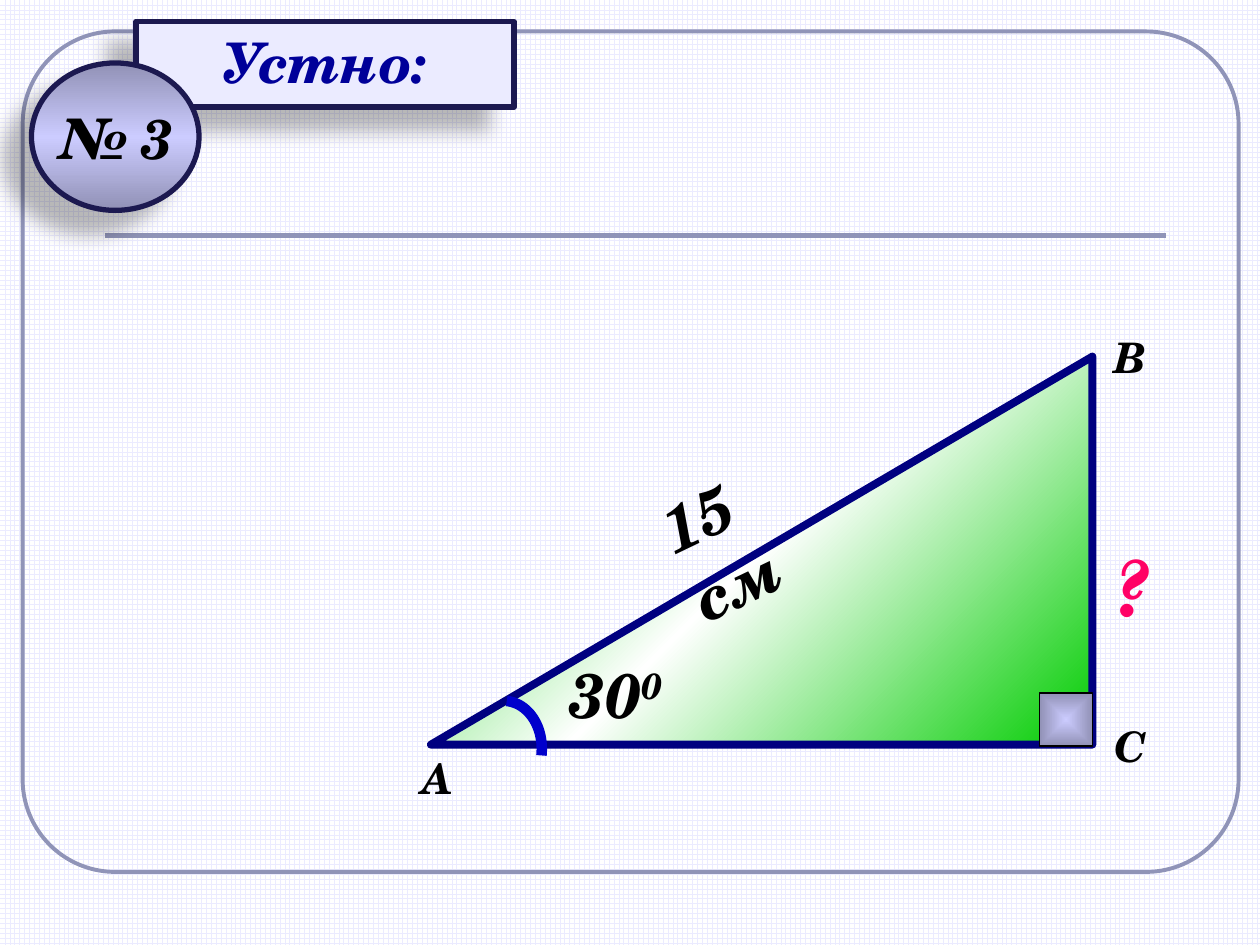
from math import cos, pi, sin
from pptx import Presentation
from pptx.dml.color import RGBColor
from pptx.enum.dml import MSO_PATTERN
from pptx.enum.shapes import MSO_CONNECTOR, MSO_SHAPE
from pptx.enum.text import MSO_ANCHOR, MSO_AUTO_SIZE, PP_ALIGN
from pptx.oxml import parse_xml
from pptx.oxml.ns import nsdecls, qn
from pptx.util import Inches, Pt

COLORS = {
    "paper": "FFFFFF", "grid": "EBEBFF", "frame": "9094B8", "edge": "1C1950",
    "title": "000099", "ink": "000000", "lilac": "CCCCFF", "green": "00CC00",
    "navy": "000080", "arc": "0000CC", "question": "FF0066",
}


def color(name):
    return RGBColor.from_string(COLORS[name])


def linear(degrees):
    return f'<a:lin ang="{degrees * 60000}" scaled="1"/>'


CENTERED = ('<a:path path="rect"><a:fillToRect l="50000" t="50000" '
            'r="50000" b="50000"/></a:path>')
DARK = '<a:shade val="46275"/>'


class GeometrySlide:
    font = "TeX Gyre Schola"

    def __init__(self, deck):
        self.page = deck.slides.add_slide(deck.slide_layouts[6])
        fill = self.page.background.fill
        fill.patterned()
        fill.pattern = MSO_PATTERN.LARGE_GRID
        fill.fore_color.rgb = color("grid")
        fill.back_color.rgb = color("paper")

    def outline(self, shape, name, width):
        shape.line.color.rgb = color(name)
        shape.line.width = Pt(width)

    def shape(self, kind, place, line, width, fill=None):
        shape = self.page.shapes.add_shape(kind, *map(Inches, place))
        shape.shadow.inherit = False
        self.outline(shape, line, width)
        if fill:
            shape.fill.solid()
            shape.fill.fore_color.rgb = color(fill)
        else:
            shape.fill.background()
        return shape

    def gradient(self, shape, stops, direction):
        marks = "".join(
            f'<a:gs pos="{place * 1000}"><a:srgbClr val="{COLORS[name]}">{change}</a:srgbClr></a:gs>'
            for place, name, change in stops)
        properties = shape._element.spPr
        properties.replace(properties.find(qn("a:noFill")), parse_xml(
            f'<a:gradFill {nsdecls("a")} rotWithShape="1"><a:gsLst>{marks}</a:gsLst>'
            f'{direction}</a:gradFill>'))

    def shadow(self, shape):
        shape._element.spPr.find(qn("a:effectLst")).append(parse_xml(
            f'<a:outerShdw {nsdecls("a")} blurRad="{Pt(11.8)}" dist="{Pt(19.7)}" '
            f'dir="{141 * 60000}" algn="ctr" rotWithShape="0"><a:srgbClr val="{COLORS["ink"]}">'
            '<a:alpha val="28000"/></a:srgbClr></a:outerShdw>'))

    def rule(self, start, end, name, width):
        line = self.page.shapes.add_connector(
            MSO_CONNECTOR.STRAIGHT, *map(Inches, start + end))
        self.outline(line, name, width)
        line._element.spPr.append(parse_xml(f'<a:effectLst {nsdecls("a")}/>'))

    def add_text(self, shape, text, size, name="ink", raised="", align=PP_ALIGN.LEFT, **frame_format):
        frame = shape.text_frame
        settings = {"word_wrap": False, "auto_size": MSO_AUTO_SIZE.SHAPE_TO_FIT_TEXT,
                    "vertical_anchor": MSO_ANCHOR.TOP, **frame_format}
        for key, value in settings.items():
            setattr(frame, key, value)
        para = frame.paragraphs[0]
        para.alignment = align
        for part in filter(None, (text, raised)):
            span = para.add_run()
            span.text = part
            for key, value in {"name": self.font, "size": Pt(size),
                               "bold": True, "italic": True}.items():
                setattr(span.font, key, value)
            span.font.color.rgb = color(name)
        if raised:
            span._r.get_or_add_rPr().set("baseline", "30000")
        return para

    def label(self, text, place, size, name="ink", raised="", rotation=0):
        box = self.page.shapes.add_textbox(*map(Inches, place))
        box.rotation = rotation
        self.add_text(box, text, size, name, raised)

    def angle_arc(self, center, radii, rotation, name, width, steps=24):
        points = [(Inches(center[0] + radii[0] * sin(pi / 2 * step / steps)),
                   Inches(center[1] - radii[1] * cos(pi / 2 * step / steps)))
                  for step in range(steps + 1)]
        builder = self.page.shapes.build_freeform(*points[0])
        builder.add_line_segments(points[1:], close=False)
        arc = builder.convert_to_shape()
        arc.shadow.inherit = False
        arc.fill.background()
        arc.rotation = rotation
        self.outline(arc, name, width)


def main():
    deck = Presentation()
    deck.slide_width, deck.slide_height = Inches(10), Inches(7.5)
    slide = GeometrySlide(deck)

    frame = slide.shape(MSO_SHAPE.ROUNDED_RECTANGLE, (0.18, 0.25, 9.65, 6.67), "frame", 2.25)
    frame.adjustments[0] = 0.11
    slide.rule((0.83, 1.87), (9.25, 1.87), "frame", 3)

    title = slide.shape(MSO_SHAPE.RECTANGLE, (1.08, 0.17, 3, 0.68), "edge", 3, "grid")
    slide.shadow(title)
    para = slide.add_text(title, "Устно:", 32, "title", align=PP_ALIGN.CENTER, word_wrap=True)
    para.space_before = Pt(6.4)

    badge = slide.shape(MSO_SHAPE.OVAL, (0.25, 0.5, 1.33, 1.17), "edge", 3)
    slide.gradient(badge, [(0, "lilac", DARK), (50, "lilac", ""), (100, "lilac", DARK)], linear(90))
    slide.shadow(badge)
    slide.add_text(badge, "№ 3", 32, align=PP_ALIGN.CENTER, auto_size=MSO_AUTO_SIZE.NONE,
                   vertical_anchor=MSO_ANCHOR.MIDDLE)

    triangle = slide.shape(MSO_SHAPE.RIGHT_TRIANGLE, (3.42, 2.83, 5.25, 3.08), "navy", 4.5)
    triangle._element.spPr.xfrm.set("flipH", "1")
    slide.gradient(triangle, [(0, "green", ""), (50, "paper", ""), (100, "green", "")], linear(315))

    corner = slide.shape(MSO_SHAPE.RECTANGLE, (8.25, 5.5, 0.42, 0.42), "ink", 0.75)
    slide.gradient(corner, [(0, "lilac", ""), (100, "lilac", DARK)], CENTERED)
    slide.angle_arc((4, 5.98), (0.32, 0.4), 6.2, "arc", 6)

    for vertex, left, top in (("А", 3.25, 5.92), ("В", 8.75, 2.58), ("С", 8.75, 5.67)):
        slide.label(vertex, (left, top, 0.45, 0.5), 24)
    slide.label("30", (4.42, 5.15, 1.1, 0.7), 36, raised="0")
    slide.label("15 см", (5.1, 3.58, 1.58, 0.7), 36, rotation=334.3)
    slide.label("?", (8.75, 4.23, 0.54, 0.83), 44, "question")
    deck.save("out.pptx")


if __name__ == "__main__":
    main()
